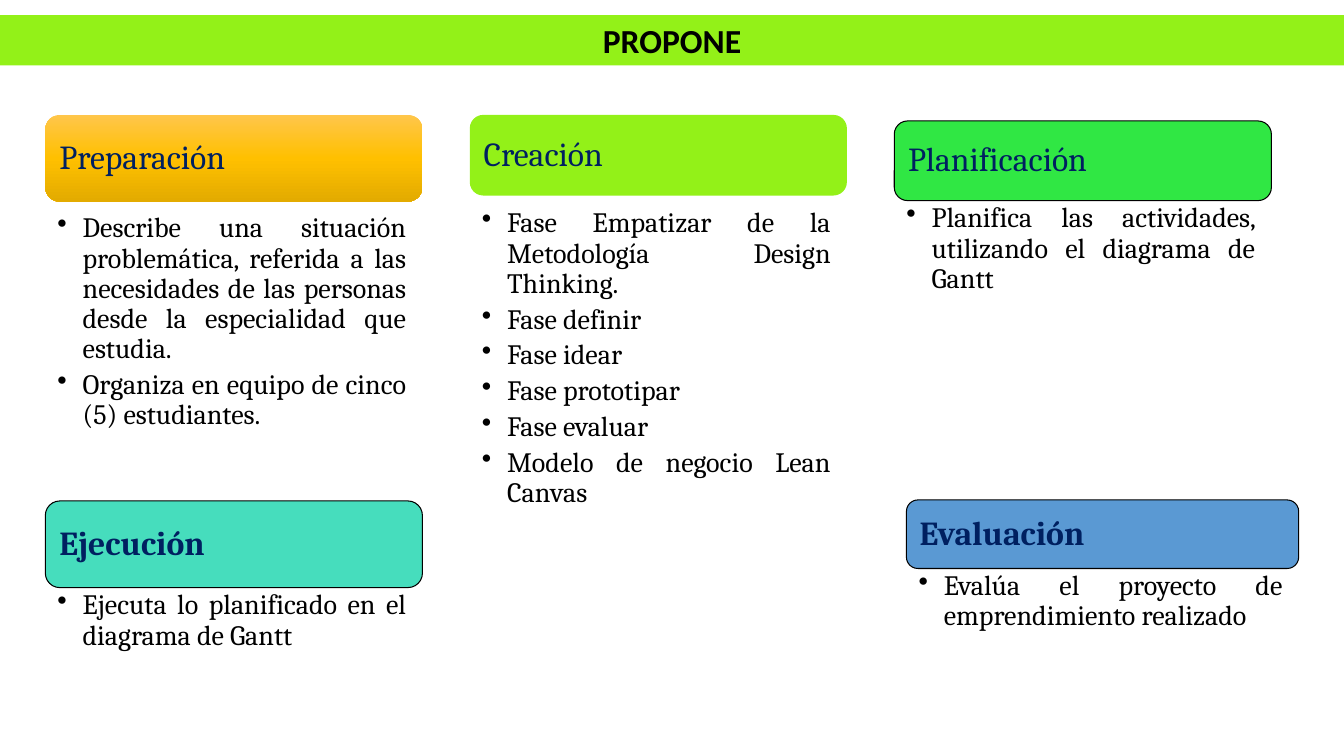
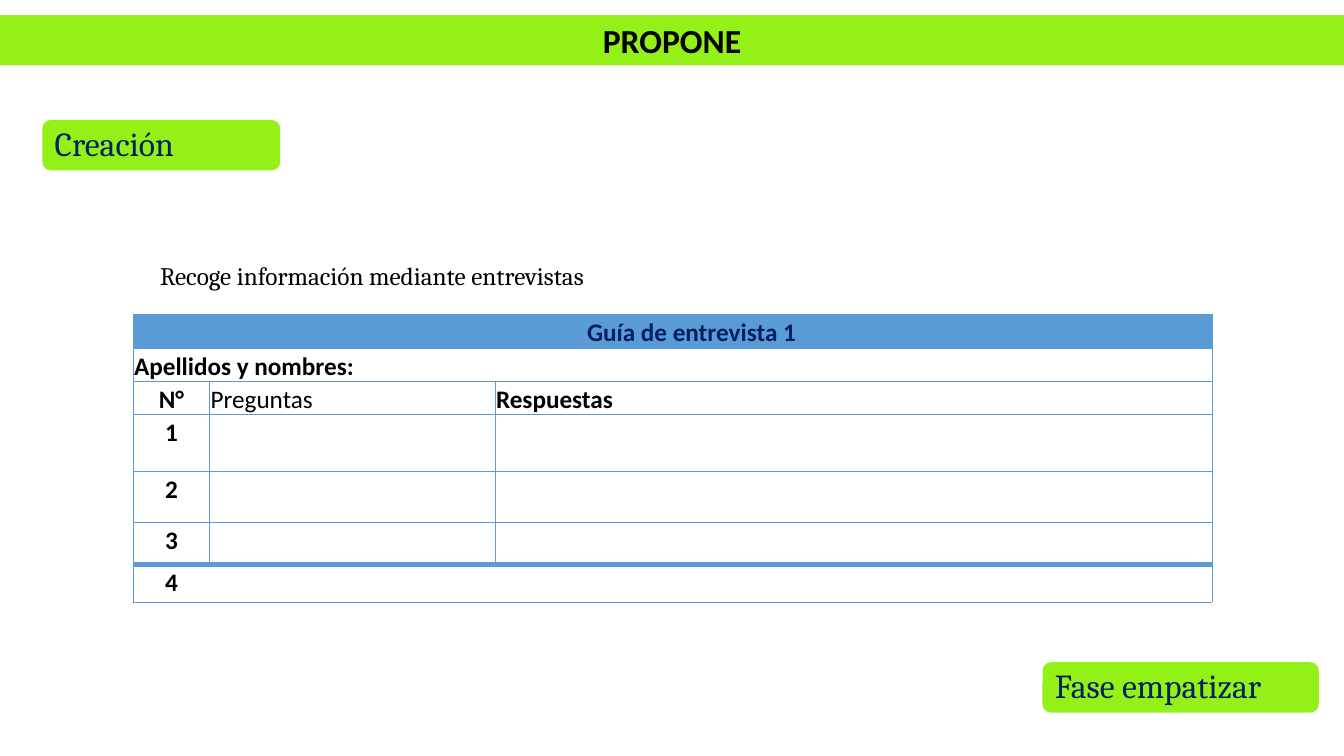
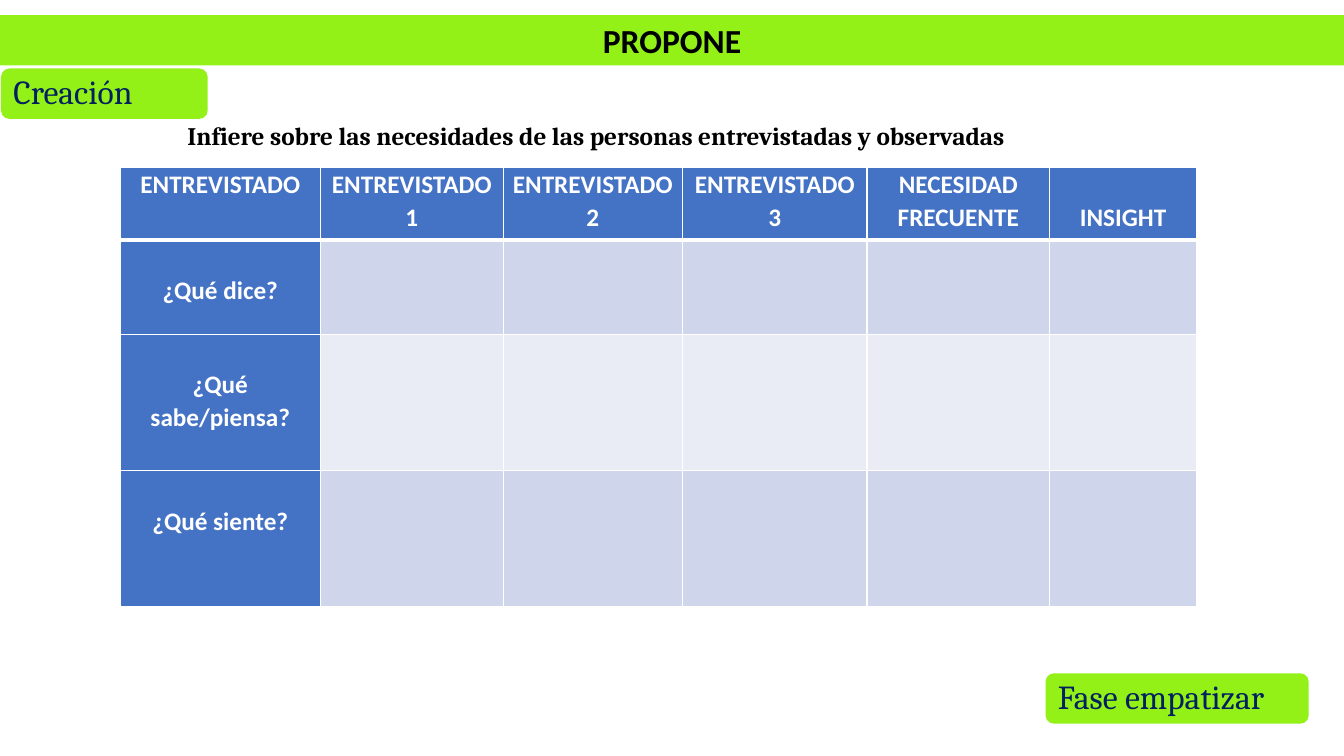
import copy

import pptx
import pptx.dml.color
import pptx.enum.shapes
import pptx.enum.text
import pptx.oxml
import pptx.oxml.ns
import pptx.util

Inches, Pt = pptx.util.Inches, pptx.util.Pt
Align = pptx.enum.text.PP_ALIGN
Anchor = pptx.enum.text.MSO_ANCHOR
Shape = pptx.enum.shapes.MSO_SHAPE

# Shared look
WIDTH, HEIGHT = 13.33, 7.5
LIME, NAVY, BLACK, WHITE = "93F118", "002060", "000000", "FFFFFF"
GUIDE_BLUE, MATRIX_BLUE = "5B9BD5", "4472C4"
BANDS = ["CFD5EA", "E9EBF5"]
TITLE = "PROPONE"
TITLE_FONT = dict(name="Calibri", size=Pt(24), bold=True, color=BLACK)
LABEL_FONT = dict(name="Cambria", size=Pt(24), bold=False, color=NAVY)
BODY_FONT = dict(name="Cambria", size=Pt(20), bold=False, color=BLACK)
LEAD_FONT = dict(name="Cambria", size=Pt(18), bold=False, color=BLACK)
CELL_FONT = dict(name="Calibri", size=Pt(18), bold=True, color=BLACK)

# Slide 1: heading, heading box, fill, outlined, bold, top of the list, list
PHASES = [
    ("Preparación", (0.45, 1.14, 3.74, 0.86), ["FFC64B", "FFC000", "E3AB00"], False, False, 2.09,
     ["Describe una situación problemática, referida a las necesidades de las personas "
      "desde la especialidad que estudia.",
      "Organiza en equipo de cinco (5) estudiantes."]),
    ("Creación", (4.66, 1.14, 3.74, 0.8), LIME, False, False, 2.04,
     ["Fase Empatizar de la Metodología Design Thinking.", "Fase definir", "Fase idear",
      "Fase prototipar", "Fase evaluar", "Modelo de negocio Lean Canvas"]),
    ("Planificación", (8.87, 1.2, 3.74, 0.79), "30E744", True, False, 1.99,
     ["Planifica las actividades, utilizando el diagrama de Gantt"]),
    ("Ejecución", (0.45, 4.97, 3.74, 0.86), "46DDBD", True, True, 5.83,
     ["Ejecuta lo planificado en el diagrama de Gantt"]),
    ("Evaluación", (8.99, 4.96, 3.89, 0.68), "5A99D3", True, True, 5.64,
     ["Evalúa el proyecto de emprendimiento realizado"]),
]
LIST_LINE = 0.3

# Slides 2 and 3
INTERVIEW_LEAD = "Recoge información mediante entrevistas"
INTERVIEW_LABELS = [("Creación", (0.42, 1.19, 2.36, 0.5)),
                    ("Fase empatizar", (10.34, 6.57, 2.74, 0.5))]
GUIDE_COLUMNS = [0.76, 2.83, 7.11]
GUIDE_HEIGHTS = [0.33, 0.33, 0.33, 0.56, 0.51, 0.42, 0.37]
GUIDE_ROWS = [["Guía de entrevista 1"], ["Apellidos y nombres:"],
              ["N°", "Preguntas", "Respuestas"], ["1"], ["2"], ["3"], ["4"]]

NEEDS_LEAD = "Infiere sobre las necesidades de las personas entrevistadas y observadas"
NEEDS_LABELS = [("Fase empatizar", (10.37, 6.68, 2.61, 0.5)),
                ("Creación", (0.01, 0.68, 2.05, 0.5))]
NEEDS_COLUMNS = [1.99, 1.81, 1.78, 1.83, 1.81, 1.46]
NEEDS_HEIGHTS = [0.72, 0.94, 1.35, 1.35]
NEEDS_ROWS = [["ENTREVISTADO", "ENTREVISTADO1", "ENTREVISTADO 2", "ENTREVISTADO 3",
               "NECESIDAD FRECUENTE", "INSIGHT"],
              ["¿Qué dice?"], ["¿Qué sabe/piensa?"], ["¿Qué siente?"]]
LOWERED = {"INSIGHT", "¿Qué dice?", "¿Qué sabe/piensa?", "¿Qué siente?"}


def rgb(value):
    return pptx.dml.color.RGBColor.from_string(value)


def apply(target, values):
    for key, value in values.items():
        if key == "color":
            target.color.rgb = rgb(value)
        else:
            setattr(target, key, value)


def box(left, top, width, height):
    return [Inches(v) for v in (left, top, width, height)]


def write(paragraph, text, font, **layout):
    run = paragraph.add_run()
    run.text = text
    apply(run.font, font)
    apply(paragraph, layout)


def paint(shape, fill):
    if isinstance(fill, str):
        shape.fill.solid()
        shape.fill.fore_color.rgb = rgb(fill)
        return
    shape.fill.gradient()
    shape.fill.gradient_angle = 270
    stop_list = shape.fill._xPr.find(".//" + pptx.oxml.ns.qn("a:gsLst"))
    stop_list.append(copy.deepcopy(stop_list[0]))
    for i, (stop, color) in enumerate(zip(shape.fill.gradient_stops, fill)):
        stop.position = i / (len(fill) - 1)
        stop.color.rgb = rgb(color)


def new_slide(deck):
    slide = deck.slides.add_slide(deck.slide_layouts[5])
    title = slide.shapes.title
    apply(title, dict(zip(("left", "top", "width", "height"), box(0, 0.15, WIDTH, 0.5))))
    paint(title, LIME)
    apply(title.text_frame, dict(vertical_anchor=Anchor.MIDDLE, word_wrap=True,
                                 auto_size=pptx.enum.text.MSO_AUTO_SIZE.NONE))
    write(title.text_frame.paragraphs[0], TITLE, TITLE_FONT, alignment=Align.CENTER)
    return slide


def add_label(slide, text, place, fill=LIME, outlined=False, bold=False):
    label = slide.shapes.add_shape(Shape.ROUNDED_RECTANGLE, *box(*place))
    label.shadow.inherit = False
    paint(label, fill)
    if outlined:
        apply(label.line, dict(color=BLACK, width=Pt(0.75)))
    else:
        label.line.fill.background()
    apply(label.text_frame, dict(margin_left=Inches(0.1), margin_right=Inches(0.1),
                                 margin_top=0, margin_bottom=0, word_wrap=True,
                                 vertical_anchor=Anchor.MIDDLE))
    write(label.text_frame.paragraphs[0], text, {**LABEL_FONT, "bold": bold},
          alignment=Align.LEFT, line_spacing=0.9)


def add_list(slide, items, place):
    frame = slide.shapes.add_textbox(*box(*place)).text_frame
    apply(frame, dict(margin_left=Inches(0.12), margin_right=Inches(0.16),
                      margin_top=Inches(0.03), margin_bottom=Inches(0.03), word_wrap=True))
    for i, item in enumerate(items):
        paragraph = frame.add_paragraph() if i else frame.paragraphs[0]
        write(paragraph, item, BODY_FONT, alignment=Align.JUSTIFY, line_spacing=0.9,
              space_after=Pt(4))
        props = paragraph._p.get_or_add_pPr()
        props.set("marL", str(Inches(0.25)))
        props.set("indent", str(-Inches(0.25)))
        bullet = pptx.oxml.parse_xml(
            f'<a:buChar {pptx.oxml.ns.nsdecls("a")} char="•"/>')
        props.append(bullet)


def add_lead(slide, text, place, bold=False):
    frame = slide.shapes.add_textbox(*box(*place)).text_frame
    frame.word_wrap = True
    write(frame.paragraphs[0], text, {**LEAD_FONT, "bold": bold})


def add_grid(slide, left, top, columns, heights):
    table = slide.shapes.add_table(len(heights), len(columns),
                                   *box(left, top, sum(columns), sum(heights))).table
    apply(table, dict(first_row=False, horz_banding=False))
    for column, width in zip(table.columns, columns):
        column.width = Inches(width)
    for row, height in zip(table.rows, heights):
        row.height = Inches(height)
    return table


def set_borders(cell, color, **widths):
    """Draw the sides L, R, T, B in points; a width of 0 hides the side."""
    for side in "LRTB":
        width = widths[side]
        kind = f'<a:solidFill><a:srgbClr val="{color}"/></a:solidFill>' if width else "<a:noFill/>"
        cell._tc.get_or_add_tcPr().append(pptx.oxml.parse_xml(
            f'<a:ln{side} {pptx.oxml.ns.nsdecls("a")} w="{Pt(width)}">{kind}</a:ln{side}>'))


def build_phases(deck):
    slide = new_slide(deck)
    for heading, place, fill, outlined, bold, list_top, items in PHASES:
        add_label(slide, heading, place, fill, outlined, bold)
        lines = sum(1 + len(item) // 26 for item in items)
        add_list(slide, items, (place[0], list_top, place[2], lines * LIST_LINE + 0.3))


def build_interview(deck):
    slide = new_slide(deck)
    for text, place in INTERVIEW_LABELS:
        add_label(slide, text, place)
    add_lead(slide, INTERVIEW_LEAD, (1.49, 2.53, 4.86, 0.4))

    guide = add_grid(slide, 1.32, 3.12, GUIDE_COLUMNS, GUIDE_HEIGHTS)
    last_row, last_col = len(GUIDE_HEIGHTS) - 1, len(GUIDE_COLUMNS) - 1
    for r, texts in enumerate(GUIDE_ROWS):
        for c in range(last_col + 1):
            cell = guide.cell(r, c)
            apply(cell, dict(margin_left=Inches(0.01), margin_right=Inches(0.01),
                             margin_top=Inches(0.01), margin_bottom=0))
            inner = 0 if r == last_row else 0.5
            set_borders(cell, GUIDE_BLUE, L=inner if c else 0.5,
                        R=inner if c < last_col else 0.5,
                        T=4 if r == last_row else 0.5, B=4 if r == last_row - 1 else 0.5)
            if r == 0:
                paint(cell, GUIDE_BLUE)
            else:
                cell.fill.background()
            if c < len(texts):
                centred = c == 0 and r != 1
                font = {**CELL_FONT, "color": BLACK if r else NAVY,
                        "bold": texts[c] != "Preguntas"}
                write(cell.text_frame.paragraphs[0], texts[c], font, line_spacing=1.07,
                      alignment=Align.CENTER if centred else Align.LEFT)
    for r in (0, 1):
        guide.cell(r, 0).merge(guide.cell(r, last_col))
    heading = guide.cell(0, 0).text_frame.paragraphs[0]
    heading._p.get_or_add_pPr().set("marL", str(Inches(0.38)))


def build_needs(deck):
    slide = new_slide(deck)
    needs = add_grid(slide, 1.19, 1.66, NEEDS_COLUMNS, NEEDS_HEIGHTS)
    for r, texts in enumerate(NEEDS_ROWS):
        for c in range(len(NEEDS_COLUMNS)):
            cell = needs.cell(r, c)
            text = texts[c] if c < len(texts) else ""
            apply(cell, dict(margin_left=Inches(0.07), margin_right=Inches(0.07),
                             margin_top=Inches(0.33 if text in LOWERED else 0),
                             margin_bottom=0))
            set_borders(cell, WHITE, L=1, R=1, T=3 if r == 1 else 1, B=1 if r else 3)
            paint(cell, MATRIX_BLUE if r == 0 or c == 0 else BANDS[(r - 1) % 2])
            if text:
                write(cell.text_frame.paragraphs[0], text, {**CELL_FONT, "color": WHITE},
                      alignment=Align.CENTER, line_spacing=1.07)
    add_lead(slide, NEEDS_LEAD, (1.76, 1.14, 9.02, 0.4), bold=True)
    for text, place in NEEDS_LABELS:
        add_label(slide, text, place)


def main():
    deck = pptx.Presentation()
    apply(deck, dict(slide_width=Inches(WIDTH), slide_height=Inches(HEIGHT)))
    for build in (build_phases, build_interview, build_needs):
        build(deck)
    deck.save("out.pptx")


if __name__ == "__main__":
    main()
